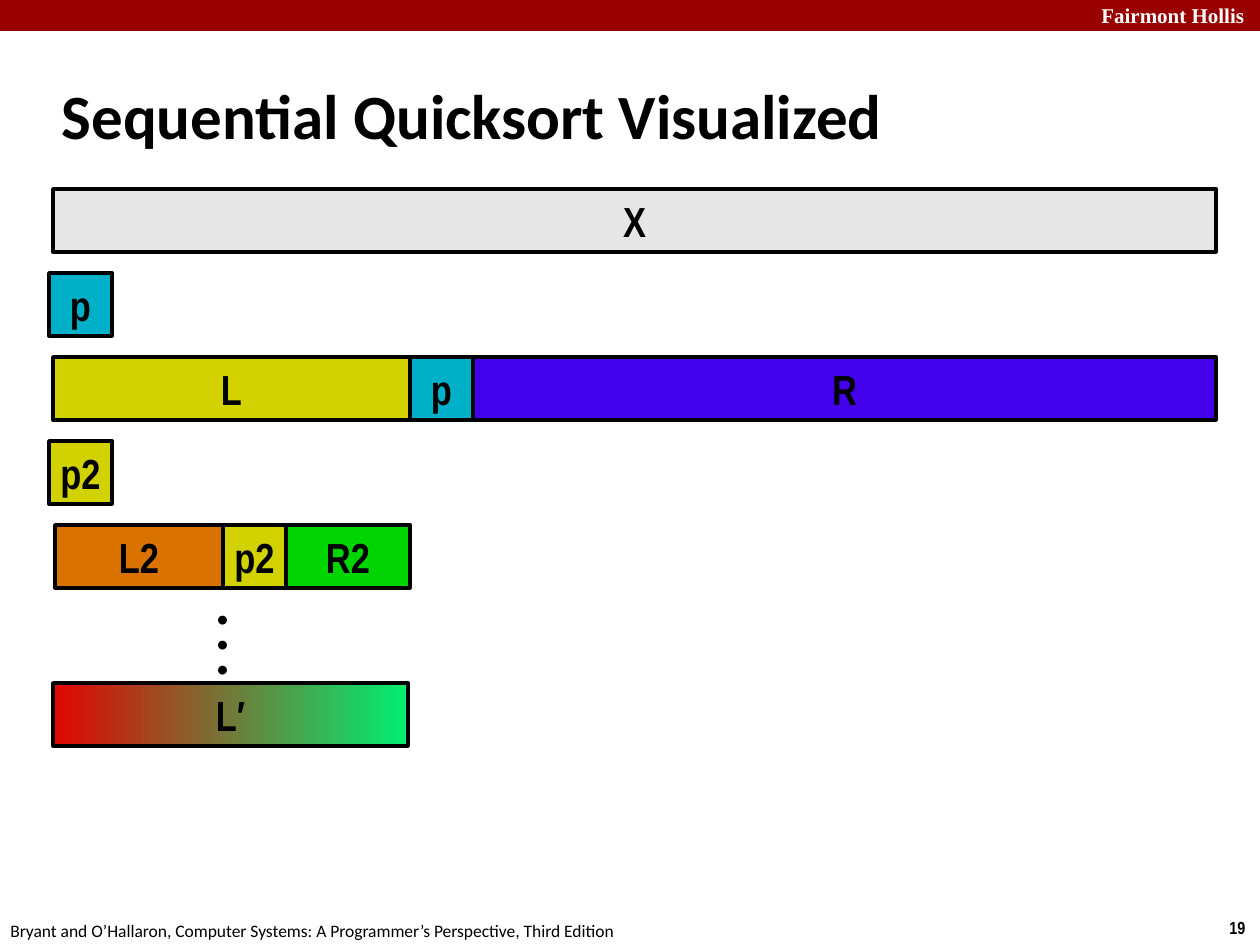
from pptx import Presentation, util as u
from pptx.dml.color import RGBColor
from pptx.enum import shapes, text

PX = 914400 / 126
BLACK = RGBColor(0x00, 0x00, 0x00)
WHITE = RGBColor(0xFF, 0xFF, 0xFF)
MAROON = RGBColor(0x99, 0x00, 0x00)
GRAY = RGBColor(0xE6, 0xE6, 0xE6)
TEAL = RGBColor(0x00, 0xB0, 0xC8)
YELLOW = RGBColor(0xD2, 0xD2, 0x00)
VIOLET = RGBColor(0x43, 0x00, 0xEA)
ORANGE = RGBColor(0xDA, 0x72, 0x00)
GREEN = RGBColor(0x01, 0xD5, 0x01)
RED = RGBColor(0xE1, 0x06, 0x01)
MINT = RGBColor(0x00, 0xEE, 0x71)


def px(*lengths):
    return [u.Emu(round(n * PX)) for n in lengths]


def style(frame, size, font, color, bold):
    for paragraph in frame.paragraphs:
        for run in paragraph.runs:
            run.font.size = u.Pt(size)
            run.font.name = font
            run.font.bold = bold
            run.font.color.rgb = color


prs = Presentation()
prs.slide_width, prs.slide_height = px(1260, 945)
slide = prs.slides.add_slide(prs.slide_layouts[5])

banner = slide.shapes.add_shape(shapes.MSO_SHAPE.RECTANGLE, *px(0, 0, 1260, 31))
banner.shadow.inherit = False
banner.fill.solid()
banner.fill.fore_color.rgb = MAROON
banner.line.fill.background()

title = slide.shapes.title
title.left, title.top, title.width, title.height = px(49, 62, 1046, 105)
title.text_frame.text = "Sequential Quicksort Visualized"
title.text_frame.auto_size = text.MSO_AUTO_SIZE.NONE
title.text_frame.vertical_anchor = text.MSO_ANCHOR.MIDDLE
title.text_frame.paragraphs[0].alignment = text.PP_ALIGN.LEFT
style(title.text_frame, 36, "Calibri", BLACK, True)

FIRST_ROW, ROW_PITCH, CELL = 189, 84, 63
rows = [
    [("X", 53, 1163, GRAY)],
    [("p", 49, CELL, TEAL)],
    [("L", 53, 357, YELLOW), ("p", 410, CELL, TEAL), ("R", 473, 743, VIOLET)],
    [("p2", 49, CELL, YELLOW)],
    [("L2", 55, 168, ORANGE), ("p2", 223, CELL, YELLOW), ("R2", 286, 124, GREEN)],
]
segments = [
    (FIRST_ROW + i * ROW_PITCH, *segment)
    for i, row in enumerate(rows)
    for segment in row
]
segments.append((683, "L′", 53, 355, None))

for top, label, left, width, color in segments:
    segment = slide.shapes.add_shape(
        shapes.MSO_SHAPE.RECTANGLE, *px(left, top, width, CELL))
    segment.shadow.inherit = False
    if color is None:
        segment.fill.gradient()
        segment.fill.gradient_angle = 0
        for stop, shade in zip(segment.fill.gradient_stops, (RED, MINT)):
            stop.color.rgb = shade
    else:
        segment.fill.solid()
        segment.fill.fore_color.rgb = color
    segment.line.color.rgb = BLACK
    segment.line.width = u.Pt(2)
    frame = segment.text_frame
    frame.text = label
    frame.word_wrap = False
    frame.vertical_anchor = text.MSO_ANCHOR.MIDDLE
    frame.paragraphs[0].alignment = text.PP_ALIGN.CENTER
    style(frame, 24, "Arial Narrow", BLACK, True)

captions = [
    ("Fairmont Hollis", 1089, -4, 180, 38, 12, "Times New Roman", WHITE, True),
    ("19", 1217, 911, 43, 34, 10, "Arial Narrow", BLACK, True),
    ("Bryant and O’Hallaron, Computer Systems: A Programmer’s Perspective, Third Edition",
     -2, 914, 640, 34, 10, "Calibri", BLACK, False),
    ("•\n•\n•", 205, 599, 35, 89, 12, "Calibri", BLACK, True),
]
for wording, left, top, width, height, size, font, color, bold in captions:
    caption = slide.shapes.add_textbox(*px(left, top, width, height))
    caption.text_frame.text = wording
    caption.text_frame.word_wrap = False
    style(caption.text_frame, size, font, color, bold)

prs.save("out.pptx")
